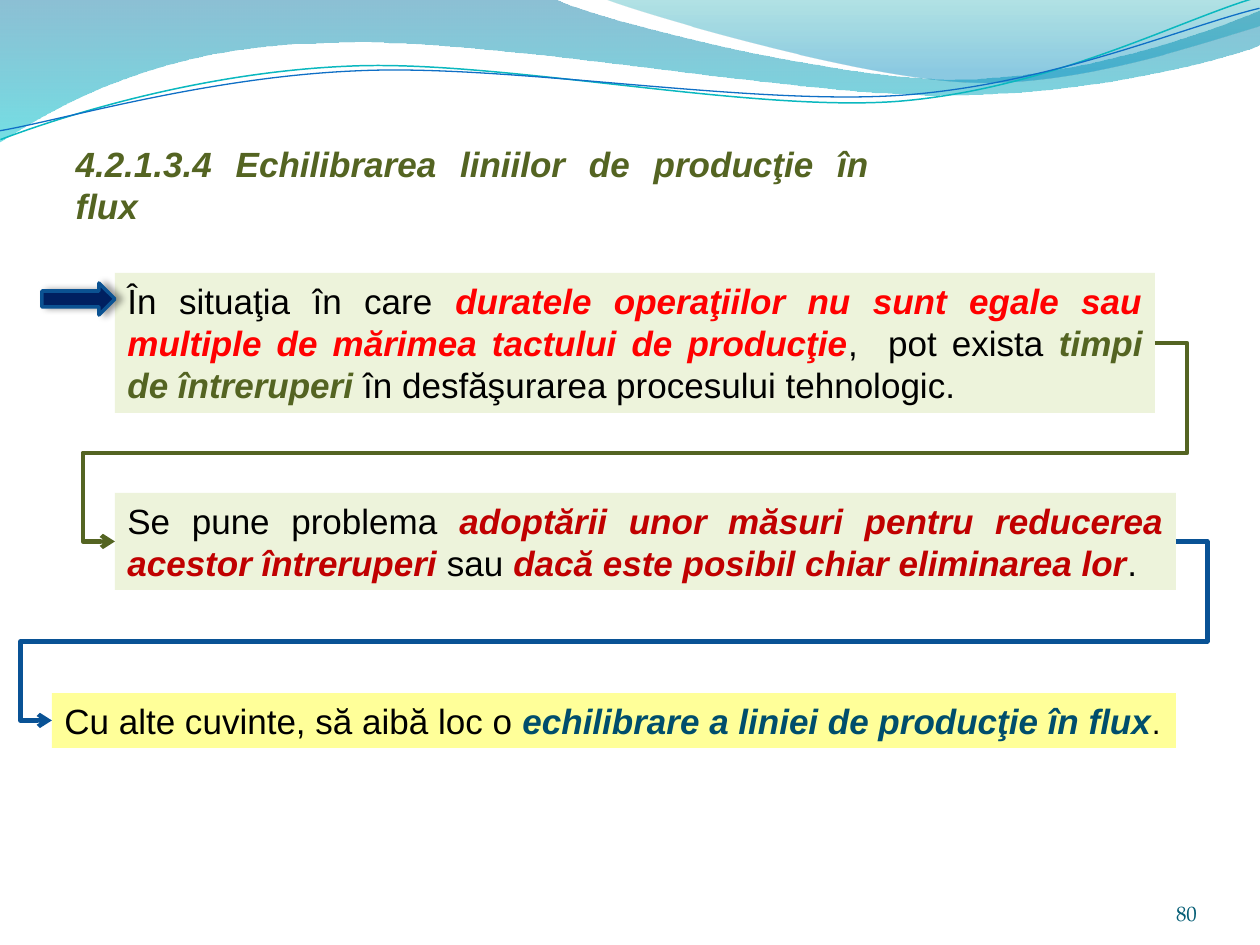
from dataclasses import dataclass

from lxml.etree import SubElement
from pptx import Presentation
from pptx.dml.color import RGBColor as Rgb
from pptx.enum.shapes import MSO_CONNECTOR as Link, MSO_SHAPE as Form
from pptx.enum.text import MSO_ANCHOR as Anchor, MSO_AUTO_SIZE as Fit, PP_ALIGN as Align
from pptx.oxml.ns import qn
from pptx.util import Pt

PX = 914400 / 126


@dataclass(frozen=True)
class Theme:
    font: str = "Arial"
    serif: str = "TeX Gyre Pagella"
    size: int = 20
    stop: int = 18
    small: int = 12
    black: str = "000000"
    olive: str = "546422"
    red: str = "FF0000"
    wine: str = "C00000"
    teal: str = "004E6C"
    number: str = "045D75"
    blue: str = "095295"
    edge: str = "0B5292"
    navy: str = "002060"
    pale: str = "EDF3DB"
    yellow: str = "FFFF99"
    aqua: str = "0AB8BF"
    azure: str = "0F6FC6"


THEME = Theme()


def emu(px):
    return round(px * PX)


def add(node, tag, **attrs):
    return SubElement(node, qn(tag), {key: str(val) for key, val in attrs.items()})


def bend(shape, parts):
    """Turn each three line steps of a six-number part into one cubic curve."""
    steps = iter(list(shape._element.spPr.iter(qn("a:lnTo"))))
    for part in parts:
        group = [next(steps) for _ in range(len(part) // 2)]
        if len(group) == 3:
            cubic = add(group[0].getparent(), "a:cubicBezTo")
            group[0].addprevious(cubic)
            for step in group:
                cubic.append(step[0])
                step.getparent().remove(step)


def write(frame, *runs, font=THEME.font, size=THEME.size, color=THEME.black, last=None,
          align=Align.JUSTIFY, anchor=Anchor.TOP, inset=None, fit=Fit.SHAPE_TO_FIT_TEXT):
    """Fill a frame; a run given as (text, color) is bold italic, last sizes the final run."""
    frame.word_wrap = True
    frame.auto_size = fit
    frame.vertical_anchor = anchor
    if inset is not None:
        frame.margin_left = frame.margin_right = emu(inset)
        frame.margin_top = frame.margin_bottom = emu(inset)
    para = frame.paragraphs[0]
    para.alignment = align
    for item in runs:
        strong = isinstance(item, tuple)
        text, tint = item if strong else (item, color)
        run = para.add_run()
        run.text = text
        run.font.name, run.font.size = font, Pt(size)
        run.font.bold = run.font.italic = strong
        run.font.color.rgb = Rgb.from_string(tint)
    if last:
        run.font.size = Pt(last)


class Page:
    def __init__(self, slide, theme):
        self.slide, self.theme = slide, theme
        self.shapes = slide.shapes

    def paint(self, shape, fill=None, line=None, width=1):
        shape.shadow.inherit = False
        if fill:
            shape.fill.solid()
            shape.fill.fore_color.rgb = Rgb.from_string(fill)
        else:
            shape.fill.background()
        if line:
            shape.line.color.rgb = Rgb.from_string(line)
            shape.line.width = Pt(width)
        else:
            shape.line.fill.background()

    def curve(self, start, parts, stops=None, line=None, width=1, turn=0):
        """Draw an open stroke, or a closed gradient band if stops are given."""
        path = self.shapes.build_freeform(*start, scale=PX)
        spots = [part[i:i + 2] for part in parts for i in range(0, len(part), 2)]
        path.add_line_segments(spots, close=bool(stops))
        shape = path.convert_to_shape()
        bend(shape, parts)
        shape.rotation = turn
        self.paint(shape, line=line, width=width)
        if stops:
            shape.fill.gradient()
            shape.fill.gradient_angle = 270
            for stop, (place, color, alpha) in zip(shape.fill.gradient_stops, stops):
                stop.position = place
                stop.color.rgb = Rgb.from_string(color)
            tints = shape._element.spPr.iter(qn("a:srgbClr"))
            for tint, (place, color, alpha) in zip(tints, stops):
                add(tint, "a:alpha", val=alpha * 1000)

    def title(self, text, *box):
        shape = self.shapes.title
        shape.left, shape.top, shape.width, shape.height = map(emu, box)
        write(shape.text_frame, (text, self.theme.olive))

    def number(self, text, *box):
        shape = self.shapes.add_textbox(*map(emu, box))
        write(shape.text_frame, text, font=self.theme.serif, size=self.theme.small,
              color=self.theme.number, align=Align.RIGHT, anchor=Anchor.BOTTOM,
              inset=0, fit=Fit.NONE)

    def panel(self, box, fill, *runs, **form):
        shape = self.shapes.add_shape(Form.RECTANGLE, *map(emu, box))
        self.paint(shape, fill)
        write(shape.text_frame, *runs, **form)
        return shape

    def arrow(self, *box):
        shape = self.shapes.add_shape(Form.RIGHT_ARROW, *map(emu, box))
        self.paint(shape, self.theme.navy, self.theme.edge, 2)
        glow = add(shape._element.spPr.find(qn("a:effectLst")), "a:outerShdw",
                   blurRad=Pt(4), dist=Pt(3), dir=0, algn="ctr", rotWithShape=0)
        add(add(glow, "a:srgbClr", val=self.theme.black), "a:alpha", val=40000)

    def link(self, top, low, color, out=32):
        """Lead from the right of one panel, between both, to the left of the next."""
        x, y = top.left + top.width, top.top + top.height // 2
        end, base = low.left, low.top + low.height // 2
        wire = self.shapes.add_connector(Link.ELBOW, x, y, end, base)
        wire.line.color.rgb = Rgb.from_string(color)
        wire.line.width = Pt(2.5)
        props = wire._element.spPr
        add(props.find(qn("a:ln")), "a:tailEnd", type="arrow")
        add(props, "a:effectLst")
        side = emu(out) / (x - end)
        mid = ((top.top + top.height + low.top) / 2 - y) / (base - y)
        shape = props.find(qn("a:prstGeom"))
        shape.set("prst", "bentConnector5")
        guides = shape.find(qn("a:avLst"))
        if guides is None:
            guides = add(shape, "a:avLst")
        for index, share in enumerate((-side, mid, 1 + side), 1):
            add(guides, "a:gd", name=f"adj{index}", fmla=f"val {round(share * 100000)}")


def main():
    deck = Presentation()
    deck.slide_width, deck.slide_height = emu(1260), emu(945)
    page = Page(deck.slides.add_slide(deck.slide_layouts[5]), THEME)

    page.curve((0, 0), [(554, -1), (600, 21, 837, 79, 955, 79), (1075, 79, 1207, 33, 1260, 11),
                        (1261, 45), (1239, 55, 1096, 96, 940, 95), (784, 95, 481, 35, 324, 43),
                        (163, 45, 58, 105, -1, 142), (0, 0)],
               stops=[(0, "0074A1", 45), (1, "00C6CF", 55)])
    page.curve((604, -1), [(641, 14, 859, 78, 969, 82), (1079, 87, 1211, 40, 1260, 26),
                           (1260, 0), (604, -1)],
               stops=[(0, "00A1A9", 30), (0.8, "008BBF", 45)])
    page.curve((-2, 110), [(59, 90, 200, 52, 350, 53), (499, 53, 745, 118, 896, 114),
                           (1049, 109, 1184, 45, 1260, 27)],
               line=THEME.aqua, width=0.85, turn=357.3)
    page.curve((-2, 101), [(57, 94, 207, 57, 358, 58), (509, 58, 750, 112, 902, 108),
                           (1052, 104, 1188, 52, 1262, 38)],
               line=THEME.azure, width=0.75, turn=357.3)

    page.number("80", 1092, 876, 105, 50)
    page.title("4.2.1.3.4 Echilibrarea liniilor de producţie în flux", 63, 136, 819, 55)
    cause = page.panel(
        (115, 273, 1040, 140), THEME.pale, "În situaţia în care ",
        ("duratele operaţiilor nu sunt egale sau multiple de mărimea tactului de producţie",
         THEME.red),
        ",  pot exista ", ("timpi de întreruperi ", THEME.olive),
        "în desfăşurarea procesului tehnologic.")
    page.arrow(42, 283, 73, 32)
    task = page.panel(
        (115, 493, 1061, 97), THEME.pale, "Se pune problema ",
        ("adoptării unor măsuri pentru reducerea acestor întreruperi", THEME.wine),
        " sau ", ("dacă este posibil chiar eliminarea lor", THEME.wine), ". ")
    goal = page.panel(
        (52, 693, 1124, 55), THEME.yellow, "Cu alte cuvinte, să aibă loc o ",
        ("echilibrare a liniei de producţie în flux", THEME.teal), ".", last=THEME.stop)
    page.link(task, goal, THEME.blue)
    page.link(cause, task, THEME.olive)
    deck.save("out.pptx")


if __name__ == "__main__":
    main()
